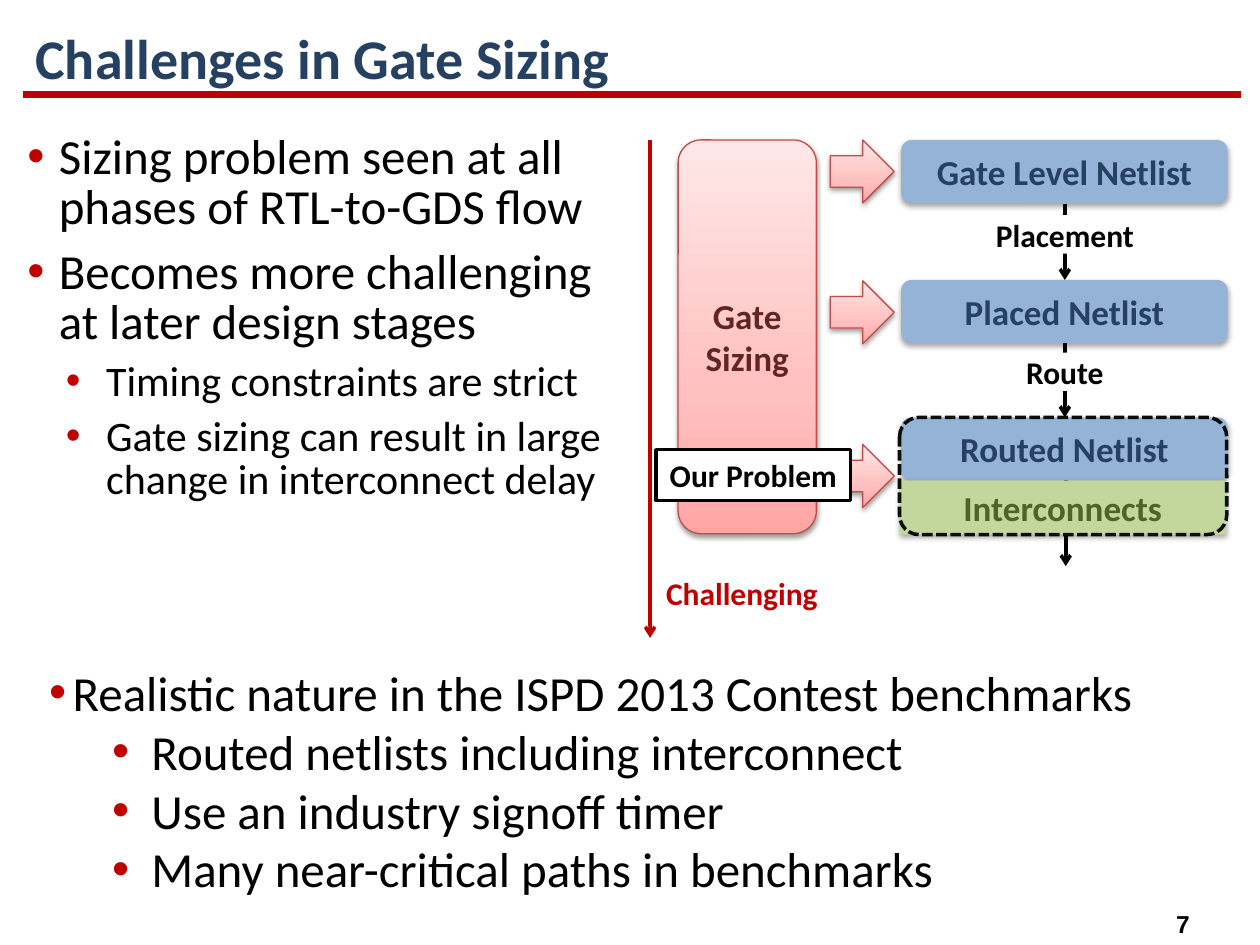
from copy import deepcopy

from lxml.etree import SubElement
from pptx import Presentation
from pptx.dml.color import RGBColor
from pptx.enum.dml import MSO_LINE
from pptx.enum.shapes import MSO_CONNECTOR, MSO_SHAPE as Preset
from pptx.enum.text import MSO_ANCHOR as Anchor, PP_ALIGN as Align
from pptx.oxml.ns import qn
from pptx.util import Pt

rgb = RGBColor.from_string
BLACK, WHITE, RED, NAVY = "000000", "FFFFFF", "C00000", "254061"
BLUE, GREEN, OLIVE, MAROON, PINK_EDGE = "95B3D7", "C3D69B", "4F6228", "632523", "BF4C48"
PINK_STOPS = [(0, "FFA6A5"), (0.35, "FFC0BF"), (1, "FFE7E7")]


def add_block(preset, box, fill=None, edge=None, edge_width=2, shadow=None):
    """Add a shape; fill is a hex colour, a list of gradient stops or None."""
    block = slide.shapes.add_shape(preset, *map(Pt, box))
    block.shadow.inherit = False
    if fill is None:
        block.fill.background()
    elif isinstance(fill, str):
        block.fill.solid()
        block.fill.fore_color.rgb = rgb(fill)
    else:
        block.fill.gradient()
        block.fill.gradient_angle = 90
        stop_list = next(block._element.spPr.iter(qn("a:gsLst")))
        stop_list.insert(1, deepcopy(stop_list[0]))
        for stop, (position, color) in zip(block.fill.gradient_stops, fill):
            stop.position = position
            stop.color.rgb = rgb(color)
    if edge:
        block.line.color.rgb = rgb(edge)
        block.line.width = Pt(edge_width)
    else:
        block.line.fill.background()
    if shadow:
        effects = block._element.spPr.find(qn("a:effectLst"))
        outer = SubElement(effects, qn("a:outerShdw"), blurRad=str(Pt(3.1)),
                           dist=str(Pt(1.7)), dir="5400000", rotWithShape="0")
        black = SubElement(outer, qn("a:srgbClr"), val=BLACK)
        SubElement(black, qn("a:alpha"), val=str(shadow * 1000))
    return block


def write(shape, lines, size, color, align=Align.CENTER, font="Calibri", margin=None):
    frame = shape.text_frame
    frame.word_wrap = False
    frame.vertical_anchor = Anchor.MIDDLE
    if margin is not None:
        frame.margin_left = frame.margin_right = Pt(margin)
        frame.margin_top = frame.margin_bottom = Pt(margin)
    frame.text = lines
    for paragraph in frame.paragraphs:
        paragraph.alignment = align
        paragraph.font.size = Pt(size)
        paragraph.font.name = font
        paragraph.font.bold = True
        paragraph.font.color.rgb = rgb(color)


prs = Presentation()
prs.slide_width, prs.slide_height = Pt(720), Pt(540)
slide = prs.slides.add_slide(prs.slide_layouts[5])

# Title and page number
title = slide.shapes.title
title.left, title.top, title.width, title.height = map(Pt, (13, 11.5, 697, 47))
write(title, "Challenges in Gate Sizing", 32, NAVY, Align.LEFT)
title.text_frame.paragraphs[0].line_spacing = 0.9
page_number = slide.shapes.add_textbox(Pt(660), Pt(515.5), Pt(32), Pt(24.5))
write(page_number, "7", 14, BLACK, font="Arial")

# Bullets: (level, size, text); indents are (text start, bullet width) by level
flow_bullets = [
    (0, 28, "Sizing problem seen at all phases of RTL-to-GDS flow"),
    (0, 28, "Becomes more challenging at later design stages"),
    (1, 24, "Timing constraints are strict"),
    (1, 24, "Gate sizing can result in large change in interconnect delay"),
]
benchmark_bullets = [
    (0, 28, "Realistic nature in the ISPD 2013 Contest benchmarks"),
    (1, 28, "Routed netlists including interconnect"),
    (1, 28, "Use an industry signoff timer"),
    (1, 28, "Many near-critical paths in benchmarks"),
]
for box, bullets, indents, line_spacing, space_share in [
    ((8.5, 73.5, 350, 291.5), flow_bullets, [(18, 18), (45, 23)], 0.85, 0.3),
    ((21, 375, 653, 143.5), benchmark_bullets, [(13.5, 13.5), (58.5, 22.5)], 1.0, 0),
]:
    frame = slide.shapes.add_textbox(*map(Pt, box)).text_frame
    frame.word_wrap = True
    for index, (level, size, text) in enumerate(bullets):
        paragraph = frame.add_paragraph() if index else frame.paragraphs[0]
        paragraph.text = text
        paragraph.level = level
        paragraph.line_spacing = line_spacing
        paragraph.space_before = Pt(size * space_share)
        text_start, bullet_width = indents[level]
        properties = paragraph._p.get_or_add_pPr()
        properties.set("marL", str(Pt(text_start)))
        properties.set("indent", str(-Pt(bullet_width)))
        bullet_color = SubElement(properties, qn("a:buClr"))
        SubElement(bullet_color, qn("a:srgbClr"), val=RED)
        SubElement(properties, qn("a:buFont"), typeface="Arial")
        SubElement(properties, qn("a:buChar"), char="•")
        paragraph.font.size = Pt(size)
        paragraph.font.name = "Calibri"
        paragraph.font.color.rgb = rgb(BLACK)

# Netlist stages
for top, stage in [(80, "Gate Level Netlist"), (160, "Placed Netlist"), (238.5, "Routed Netlist")]:
    netlist = add_block(Preset.ROUNDED_RECTANGLE, (515, top, 186.5, 36), BLUE, shadow=35)
    write(netlist, stage, 20, NAVY)

# Flow arrows, and the red arrow of rising difficulty
for x, start, end, color in [
    (608.5, 116.5, 160, BLACK),
    (608.5, 196, 238.5, BLACK),
    (609, 274.5, 323.5, BLACK),
    (371.5, 80, 364.5, RED),
]:
    arrow = slide.shapes.add_connector(MSO_CONNECTOR.STRAIGHT, Pt(x), Pt(start), Pt(x), Pt(end))
    arrow.line.color.rgb = rgb(color)
    arrow.line.width = Pt(2)
    SubElement(arrow.line._get_or_add_ln(), qn("a:tailEnd"), type="arrow")
    SubElement(arrow._element.spPr, qn("a:effectLst"))

for box, step in [((569, 123, 79, 22), "Placement"), ((586, 201.5, 45, 22), "Route")]:
    write(add_block(Preset.RECTANGLE, box, WHITE), step, 18, BLACK, margin=0)

interconnects = add_block(Preset.ROUNDED_RECTANGLE, (514, 274.5, 186.5, 31), GREEN, shadow=35)
interconnects.adjustments[0] = 0.05
write(interconnects, "Interconnects", 20, OLIVE)

# Gate sizing acts on every stage
for top in (80, 160.5, 254):
    add_block(Preset.RIGHT_ARROW, (474.5, top, 36.5, 36), PINK_STOPS, PINK_EDGE, 0.75, shadow=38)
gate_sizing = add_block(Preset.ROUNDED_RECTANGLE, (387.5, 80, 79, 225),
                        PINK_STOPS, PINK_EDGE, 0.75, shadow=38)
write(gate_sizing, "Gate\nSizing", 20, MAROON)

challenging = slide.shapes.add_textbox(Pt(373.5), Pt(324.5), Pt(101.5), Pt(29))
write(challenging, "Challenging", 18, RED, Align.LEFT)

# Scope of the problem
scope = add_block(Preset.ROUNDED_RECTANGLE, (514, 238.5, 187, 67), edge="0D0D0D")
scope.line.dash_style = MSO_LINE.SQUARE_DOT
write(add_block(Preset.RECTANGLE, (375, 257, 111, 29), WHITE, BLACK), "Our Problem", 18, BLACK)

title_rule = slide.shapes.add_connector(MSO_CONNECTOR.STRAIGHT, Pt(13), Pt(54), Pt(709), Pt(54))
title_rule.line.color.rgb = rgb(RED)
title_rule.line.width = Pt(4.5)
SubElement(title_rule._element.spPr, qn("a:effectLst"))

prs.save("out.pptx")
